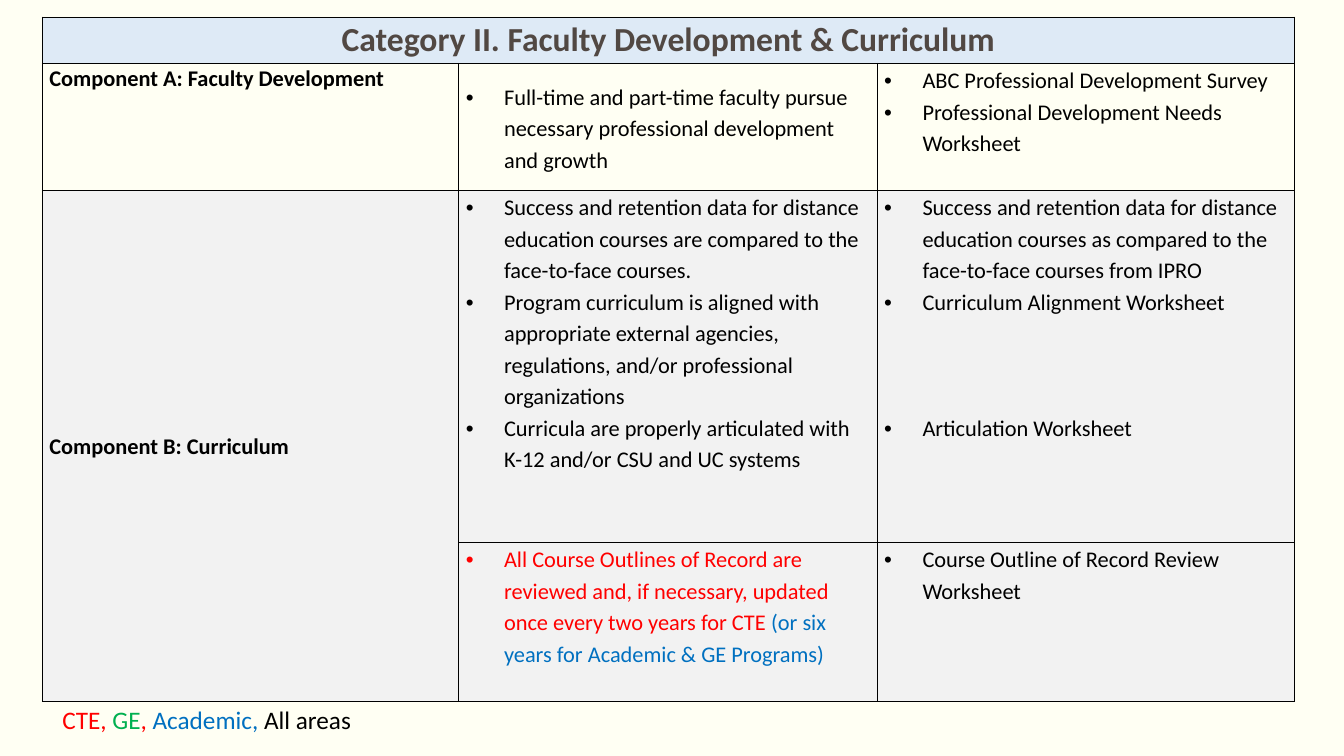
from dataclasses import dataclass

import pptx
import pptx.dml.color
import pptx.enum.text
import pptx.oxml
import pptx.oxml.ns
import pptx.table
import pptx.text.text
import pptx.util
from pptx.util import Inches

ANCHOR = pptx.enum.text.MSO_ANCHOR
ALIGN = pptx.enum.text.PP_ALIGN


@dataclass(frozen=True)
class Theme:
    font: str = "Calibri"
    background: str = "FFFFF3"
    heading_fill: str = "DEEAF6"
    curriculum_fill: str = "F2F2F2"
    heading: str = "514843"
    black: str = "000000"
    cte: str = "FF0000"
    ge: str = "00B050"
    academic: str = "0070C0"
    heading_size: float = 24
    body_size: float = 16
    legend_size: float = 18
    label_spacing: float = 1.07
    list_spacing: float = 1.15
    margin: float = 0.07
    indent: float = 0.38
    border: float = 1


THEME = Theme()


@dataclass(frozen=True)
class Span:
    text: str
    color: str = THEME.black


@dataclass(frozen=True)
class Item:
    spans: tuple[Span, ...]
    before: float = 0


@dataclass(frozen=True)
class CellText:
    row: int
    col: int
    items: tuple[Item, ...]
    anchor: ANCHOR = ANCHOR.TOP
    bulleted: bool = True
    size: float = THEME.body_size
    align: ALIGN = ALIGN.LEFT


def item(text: str, color: str = THEME.black, before: float = 0) -> Item:
    return Item((Span(text, color),), before)


def rgb(color: str) -> pptx.dml.color.RGBColor:
    return pptx.dml.color.RGBColor.from_string(color)


def add_spans(p: pptx.text.text._Paragraph, spans: tuple[Span, ...],
              size: float, bold: bool = False) -> None:
    for span in spans:
        r = p.add_run()
        r.text = span.text
        r.font.name = THEME.font
        r.font.size = pptx.util.Pt(size)
        r.font.bold = bold
        r.font.color.rgb = rgb(span.color)


def add_bullet(p: pptx.text.text._Paragraph) -> None:
    pPr = p._p.get_or_add_pPr()
    pPr.set("marL", str(Inches(THEME.indent)))
    pPr.set("indent", str(-Inches(THEME.indent)))
    ns = pptx.oxml.ns.nsdecls("a")
    pPr.append(pptx.oxml.parse_xml(f'<a:buFont {ns} typeface="Arial"/>'))
    pPr.append(pptx.oxml.parse_xml(f'<a:buChar {ns} char="•"/>'))


def format_cell(cell: pptx.table._Cell, fill: str) -> None:
    tcPr = cell._tc.get_or_add_tcPr()
    width = pptx.util.Pt(THEME.border)
    for side in ("lnL", "lnR", "lnT", "lnB"):
        tcPr.append(pptx.oxml.parse_xml(
            f'<a:{side} {pptx.oxml.ns.nsdecls("a")} w="{width}"><a:solidFill>'
            f'<a:srgbClr val="{THEME.black}"/></a:solidFill></a:{side}>'))
    if fill:
        cell.fill.solid()
        cell.fill.fore_color.rgb = rgb(fill)
    else:
        cell.fill.background()
    cell.margin_left = cell.margin_right = Inches(THEME.margin)
    cell.margin_top = cell.margin_bottom = 0


def write_cell(cell: pptx.table._Cell, content: CellText) -> None:
    cell.vertical_anchor = content.anchor
    tf = cell.text_frame
    for i, entry in enumerate(content.items):
        p = tf.add_paragraph() if i else tf.paragraphs[0]
        p.alignment = content.align
        p.line_spacing = THEME.list_spacing if content.bulleted else THEME.label_spacing
        if entry.before:
            p.space_before = pptx.util.Pt(entry.before)
        if content.bulleted:
            add_bullet(p)
        add_spans(p, entry.spans, content.size, bold=not content.bulleted)


COLUMNS = (4.13, 4.15, 4.14)
ROWS = (0.46, 1.26, 3.49, 1.58)
ROW_FILLS = (THEME.heading_fill, "", THEME.curriculum_fill, THEME.curriculum_fill)

CONTENTS = (
    CellText(0, 0, (item("Category II. Faculty Development & Curriculum", THEME.heading),),
             bulleted=False, size=THEME.heading_size, align=ALIGN.CENTER),
    CellText(1, 0, (item("Component A: Faculty Development"),), bulleted=False),
    CellText(1, 1, (
        item("Full-time and part-time faculty pursue necessary professional "
             "development and growth"),
    ), anchor=ANCHOR.MIDDLE),
    CellText(1, 2, (
        item("ABC Professional Development Survey"),
        item("Professional Development Needs Worksheet"),
    )),
    CellText(2, 0, (item("Component B: Curriculum"),), ANCHOR.MIDDLE, bulleted=False),
    CellText(2, 1, (
        item("Success and retention data for distance education courses are "
             "compared to the face-to-face courses."),
        item("Program curriculum is aligned with appropriate external agencies, "
             "regulations, and/or professional organizations"),
        item("Curricula are properly articulated with K-12 and/or CSU and UC systems"),
    )),
    CellText(2, 2, (
        item("Success and retention data for distance education courses as "
             "compared to the face-to-face courses from IPRO"),
        item("Curriculum Alignment Worksheet"),
        item("Articulation Worksheet", before=67.5),
    )),
    CellText(3, 1, (Item((
        Span("All Course Outlines of Record are reviewed and, if necessary, "
             "updated once every two years for CTE ", THEME.cte),
        Span("(or six years for Academic & GE Programs)", THEME.academic),
    )),)),
    CellText(3, 2, (item("Course Outline of Record Review Worksheet"),)),
)

LEGEND = (Span("CTE, ", THEME.cte), Span("GE", THEME.ge), Span(", ", THEME.cte),
          Span("Academic, ", THEME.academic), Span("All areas"))


def main() -> None:
    prs = pptx.Presentation()
    prs.slide_width, prs.slide_height = Inches(13.33), Inches(7.5)
    s = prs.slides.add_slide(prs.slide_layouts[6])
    s.background.fill.solid()
    s.background.fill.fore_color.rgb = rgb(THEME.background)

    # Legend of program areas
    sp = s.shapes.add_textbox(Inches(0.52), Inches(6.94), Inches(4.34), Inches(0.4))
    tf = sp.text_frame
    tf.word_wrap = True
    tf.auto_size = pptx.enum.text.MSO_AUTO_SIZE.SHAPE_TO_FIT_TEXT
    add_spans(tf.paragraphs[0], LEGEND, THEME.legend_size)

    # Table grid
    table = s.shapes.add_table(len(ROWS), len(COLUMNS), Inches(0.42), Inches(0.17),
                               Inches(sum(COLUMNS)), Inches(sum(ROWS))).table
    table.first_row = table.horz_banding = False
    for column, width in zip(table.columns, COLUMNS):
        column.width = Inches(width)
    for row, height, fill in zip(table.rows, ROWS, ROW_FILLS):
        row.height = Inches(height)
        for cell in row.cells:
            format_cell(cell, fill)
    table.cell(0, 0).merge(table.cell(0, 2))
    table.cell(2, 0).merge(table.cell(3, 0))

    # Table text
    for content in CONTENTS:
        write_cell(table.cell(content.row, content.col), content)

    prs.save("out.pptx")


if __name__ == "__main__":
    main()
